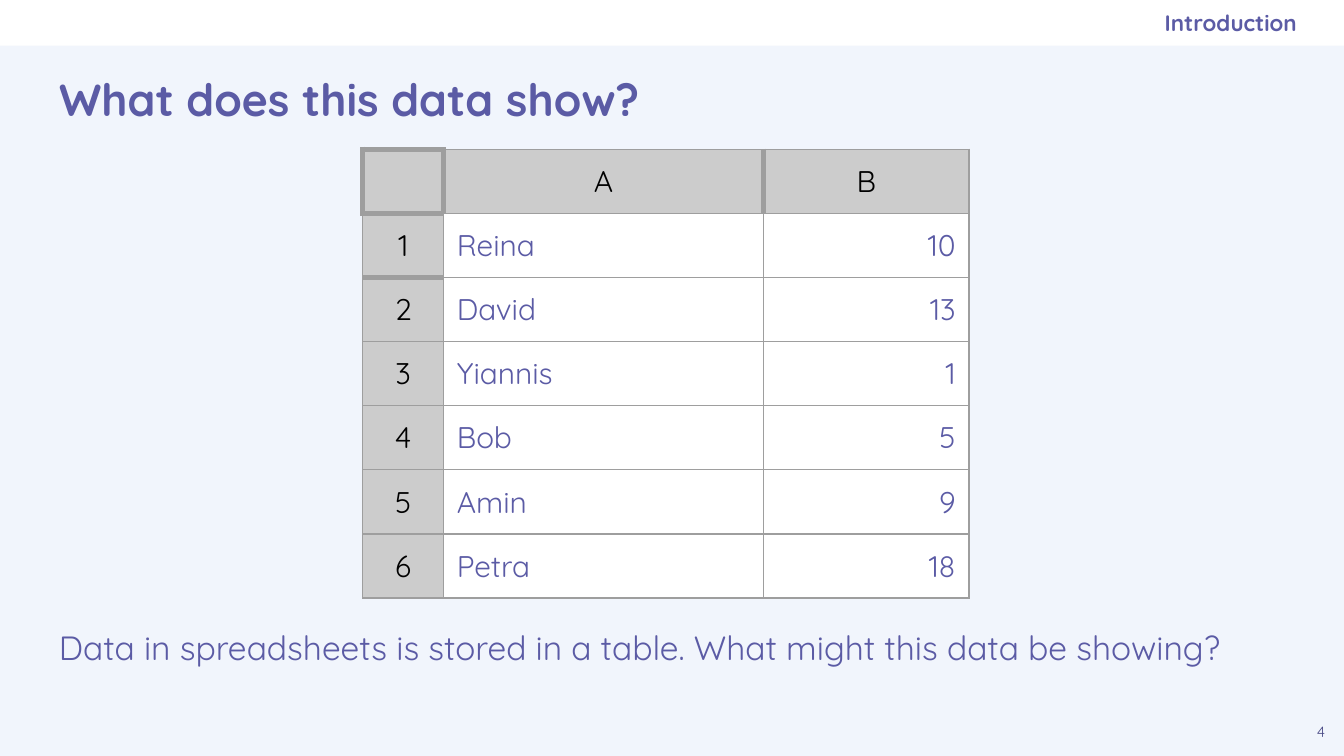
from lxml.etree import SubElement
from pptx import Presentation
from pptx.dml.color import RGBColor
from pptx.enum.shapes import MSO_SHAPE
from pptx.enum.text import MSO_ANCHOR, MSO_AUTO_SIZE, PP_ALIGN
from pptx.oxml.ns import qn
from pptx.util import Inches, Pt

FONT = "Quicksand"
COLORS = {
    "background": "F1F5FC",
    "white": "FFFFFF",
    "purple": "5B5BA5",
    "number": "494985",
    "black": "000000",
    "header": "CCCCCC",
    "border": "9E9E9E",
}
MARGINS = ("margin_left", "margin_top", "margin_right", "margin_bottom")
SCORES = [("Reina", 10), ("David", 13), ("Yiannis", 1),
          ("Bob", 5), ("Amin", 9), ("Petra", 18)]


def color(name):
    """Return the named colour."""
    return RGBColor.from_string(COLORS[name])


def set_attributes(target, values):
    """Set each attribute of the target from a dict."""
    for name, value in values.items():
        setattr(target, name, value)


def write_text(frame, text, size, color_name="purple", bold=False, **paragraph_format):
    """Write one formatted paragraph into a text frame."""
    frame.text = text
    paragraph = frame.paragraphs[0]
    set_attributes(paragraph, {"alignment": PP_ALIGN.LEFT, **paragraph_format})
    font = paragraph.runs[0].font
    set_attributes(font, {"name": FONT, "size": Pt(size), "bold": bold})
    font.color.rgb = color(color_name)


def place_text(shape, box, text, size, anchor=MSO_ANCHOR.TOP, right=0.1, **text_format):
    """Move a text shape to its box and fill it with text."""
    edges = ("left", "top", "width", "height")
    set_attributes(shape, dict(zip(edges, map(Inches, box))))
    frame = shape.text_frame
    set_attributes(frame, {
        **dict.fromkeys(MARGINS, Inches(0.1)),
        "margin_right": Inches(right),
        "word_wrap": True,
        "auto_size": MSO_AUTO_SIZE.NONE,
        "vertical_anchor": anchor,
    })
    write_text(frame, text, size, **text_format)


def add_text(slide, box, text, size, **text_format):
    """Add a text box to the slide."""
    shape = slide.shapes.add_textbox(*map(Inches, box))
    place_text(shape, box, text, size, **text_format)


def add_banner(slide, box):
    """Add the white strip behind the section name."""
    banner = slide.shapes.add_shape(MSO_SHAPE.RECTANGLE, *map(Inches, box))
    banner.shadow.inherit = False
    banner.fill.solid()
    banner.fill.fore_color.rgb = color("white")
    banner.line.fill.background()
    tree = slide.shapes.element
    tree.remove(banner.element)
    tree.insert(2, banner.element)


def set_borders(cell, thick_sides):
    """Draw the four cell borders, some of them thick."""
    properties = cell._tc.get_or_add_tcPr()
    for side in "LRTB":
        width = Pt(3 if side in thick_sides else 0.75)
        line = SubElement(properties, qn(f"a:ln{side}"), w=str(width))
        fill = SubElement(line, qn("a:solidFill"))
        SubElement(fill, qn("a:srgbClr"), val=COLORS["border"])


def add_spreadsheet(slide, box, column_widths):
    """Add the spreadsheet table with its row and column headings."""
    rows = [("", "A", "B")]
    rows += [(number, *score) for number, score in enumerate(SCORES, 1)]
    frame = slide.shapes.add_table(len(rows), len(column_widths), *map(Inches, box))
    table = frame.table
    set_attributes(table, {"first_row": False, "horz_banding": False})
    for column, width in zip(table.columns, column_widths):
        column.width = Inches(width)
    for row in table.rows:
        row.height = Inches(box[3] / len(rows))

    thick = {(0, 0): "LRTB", (0, 1): "LR", (0, 2): "L", (1, 0): "TB", (2, 0): "T"}
    alignments = (PP_ALIGN.CENTER, PP_ALIGN.LEFT, PP_ALIGN.RIGHT)
    for row_index, values in enumerate(rows):
        for column_index, value in enumerate(values):
            cell = table.cell(row_index, column_index)
            heading = row_index == 0 or column_index == 0
            set_borders(cell, thick.get((row_index, column_index), ""))
            cell.fill.solid()
            cell.fill.fore_color.rgb = color("header" if heading else "white")
            if value != "":
                set_attributes(cell, dict.fromkeys(MARGINS, Inches(0.1)))
                write_text(cell.text_frame, str(value), 16,
                           "black" if heading else "purple",
                           alignment=PP_ALIGN.CENTER if heading else alignments[column_index])


def build_slide(presentation):
    """Build the data question slide."""
    slide = presentation.slides.add_slide(presentation.slide_layouts[0])
    slide.background.fill.solid()
    slide.background.fill.fore_color.rgb = color("background")
    add_banner(slide, (0, 0, 10, 0.34))
    place_text(slide.shapes.title, (0.34, 0.35, 9.32, 0.76), "What does this data show?",
               24, anchor=MSO_ANCHOR.MIDDLE, bold=True)
    place_text(slide.placeholders[1], (5.75, 0, 3.9, 0.34), "Introduction", 12,
               anchor=MSO_ANCHOR.MIDDLE, right=0, bold=True,
               alignment=PP_ALIGN.RIGHT, space_before=Pt(0))
    add_text(slide, (9.66, 5.28, 0.34, 0.34), "4", 8,
             color_name="number", alignment=PP_ALIGN.CENTER)
    add_text(slide, (0.34, 4.52, 9.22, 0.76),
             "Data in spreadsheets is stored in a table. What might this data be showing?",
             18, line_spacing=1.15, space_after=Pt(16))
    add_spreadsheet(slide, (2.7, 1.11, 4.51, 3.28), (0.6, 2.38, 1.53))


def main():
    """Create and save the presentation."""
    presentation = Presentation()
    width = Inches(10)
    set_attributes(presentation, {"slide_width": width, "slide_height": width * 9 // 16})
    build_slide(presentation)
    presentation.save("out.pptx")


if __name__ == "__main__":
    main()
